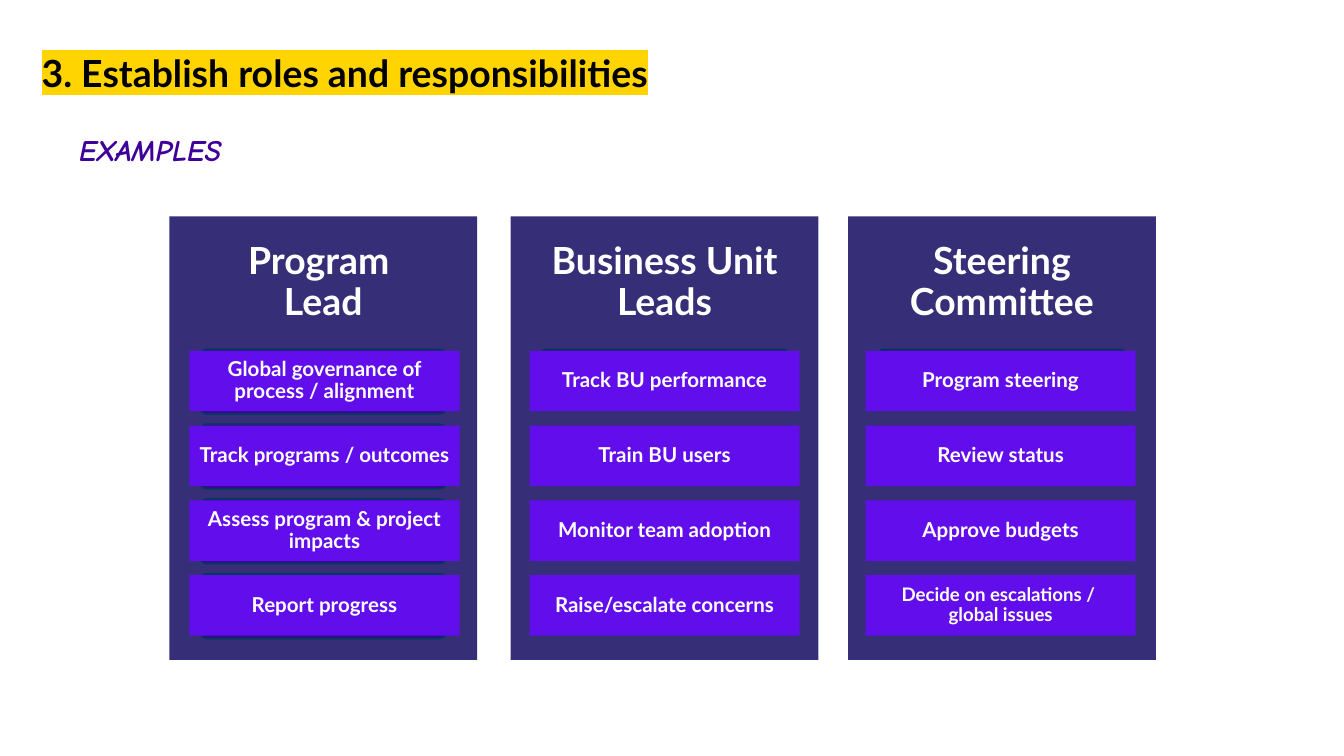
from lxml import etree
from pptx import Presentation
from pptx.dml.color import RGBColor
from pptx.enum.shapes import MSO_SHAPE
from pptx.enum.text import MSO_ANCHOR, PP_ALIGN
from pptx.oxml.ns import qn
from pptx.util import Inches, Pt

RECTANGLE, ROUNDED = MSO_SHAPE.RECTANGLE, MSO_SHAPE.ROUNDED_RECTANGLE
TOP, MIDDLE = MSO_ANCHOR.TOP, MSO_ANCHOR.MIDDLE
LEFT, CENTER = PP_ALIGN.LEFT, PP_ALIGN.CENTER

TITLE = "3. Establish roles and responsibilities"
LABEL = "EXAMPLES"
ROLES = [
    {
        "left": 1.26, "task_offset": 0.15, "backing_height": 0.48, "backing_count": 4,
        "name": ["Program ", "Lead"],
        "tasks": [
            ["Global governance of process / alignment"],
            ["Track programs / outcomes"],
            ["Assess program & project impacts"],
            ["Report progress"],
        ],
    },
    {
        "left": 3.8, "task_offset": 0.14, "backing_height": 0.32, "backing_count": 1,
        "name": ["Business Unit Leads"],
        "tasks": [
            ["Track BU performance"],
            ["Train BU users"],
            ["Monitor team adoption"],
            ["Raise/escalate concerns"],
        ],
    },
    {
        "left": 6.31, "task_offset": 0.13, "backing_height": 0.32, "backing_count": 1,
        "name": ["Steering Committee"],
        "tasks": [
            ["Program steering"],
            ["Review status"],
            ["Approve budgets"],
            ["Decide on escalations / ", "global issues"],
        ],
    },
]

THEME = {
    "highlight": "FFD400",
    "panel": "362E77",
    "task": "620DEC",
    "backing": "3F0099",
    "backing_line": "00395B",
    "title": {"name": "Lato", "size": Pt(20), "bold": True, "color": "000000"},
    "label": {"name": "Comic Neue", "size": Pt(16), "bold": True, "italic": True, "color": "3F0099"},
    "role": {"name": "Lato", "size": Pt(20), "bold": True, "color": "FFFFFF"},
    "task_text": {"name": "Lato", "size": Pt(11), "bold": True, "color": "FFFFFF"},
    "small_task_text": {"name": "Lato", "size": Pt(10), "bold": True, "color": "FFFFFF"},
}

SLIDE_WIDTH = 10
SLIDE_HEIGHT = SLIDE_WIDTH * 9 / 16
PANEL_TOP, PANEL_WIDTH, PANEL_HEIGHT = 1.61, 2.29, 3.3
HEADING_HEIGHT = 0.99
TASK_TOP, LAST_TASK_TOP, TASK_WIDTH, TASK_HEIGHT = 2.61, 4.28, 2.01, 0.45
BACKING_TOP, BACKING_OFFSET, BACKING_WIDTH = 2.6, 0.23, 1.83


def write(shape, lines, style, inset, anchor=MIDDLE, align=CENTER, spacing=0.9):
    frame = shape.text_frame
    side, edge = inset
    settings = {
        "word_wrap": True, "vertical_anchor": anchor,
        "margin_left": Inches(side), "margin_right": Inches(side),
        "margin_top": Inches(edge), "margin_bottom": Inches(edge),
    }
    for name, value in settings.items():
        setattr(frame, name, value)
    for index, line in enumerate(lines):
        paragraph = frame.add_paragraph() if index else frame.paragraphs[0]
        paragraph.alignment, paragraph.line_spacing = align, spacing
        run = paragraph.add_run()
        run.text = line
        for name, value in style.items():
            if name == "color":
                run.font.color.rgb = RGBColor.from_string(value)
            else:
                setattr(run.font, name, value)


def add_block(slide, kind, box, fill, line=None):
    shape = slide.shapes.add_shape(kind, *map(Inches, box))
    shape.shadow.inherit = False
    shape.fill.solid()
    shape.fill.fore_color.rgb = RGBColor.from_string(fill)
    if line:
        shape.line.color.rgb = RGBColor.from_string(line)
        shape.line.width = Pt(1)
    else:
        shape.line.fill.background()
    return shape


def add_text(slide, box, lines, style, inset, **options):
    shape = slide.shapes.add_textbox(*map(Inches, box))
    write(shape, lines, style, inset, **options)
    return shape


def highlight(run, color):
    mark = etree.Element(qn("a:highlight"))
    etree.SubElement(mark, qn("a:srgbClr"), val=color)
    run.font._element.find(qn("a:solidFill")).addnext(mark)


def add_role(slide, role):
    left = role["left"]
    pitch = (LAST_TASK_TOP - TASK_TOP) / (len(role["tasks"]) - 1)
    add_block(slide, RECTANGLE, (left, PANEL_TOP, PANEL_WIDTH, PANEL_HEIGHT), THEME["panel"])
    add_text(slide, (left, PANEL_TOP, PANEL_WIDTH, HEADING_HEIGHT), role["name"],
             THEME["role"], (0.13, 0.13))
    for index, lines in enumerate(role["tasks"]):
        shift = index * pitch
        if index < role["backing_count"]:
            box = (left + BACKING_OFFSET, BACKING_TOP + shift, BACKING_WIDTH, role["backing_height"])
            backing = add_block(slide, ROUNDED, box, THEME["backing"], THEME["backing_line"])
            backing.adjustments[0] = 0.1
        box = (left + role["task_offset"], TASK_TOP + shift, TASK_WIDTH, TASK_HEIGHT)
        task = add_block(slide, RECTANGLE, box, THEME["task"])
        style = THEME["small_task_text" if len(lines) > 1 else "task_text"]
        write(task, lines, style, (0.03, 0.02))


def main():
    presentation = Presentation()
    presentation.slide_width = Inches(SLIDE_WIDTH)
    presentation.slide_height = Inches(SLIDE_HEIGHT)
    slide = presentation.slides.add_slide(presentation.slide_layouts[6])
    plain = {"anchor": TOP, "align": LEFT, "spacing": 1.0}
    title = add_text(slide, (0.24, 0.33, 6.74, 0.63), [TITLE], THEME["title"], (0.07, 0.04), **plain)
    highlight(title.text_frame.paragraphs[0].runs[0], THEME["highlight"])
    for role in ROLES:
        add_role(slide, role)
    add_text(slide, (0.49, 0.88, 1.27, 0.47), [LABEL], THEME["label"], (0.1, 0.1), **plain)
    presentation.save("out.pptx")


if __name__ == "__main__":
    main()
